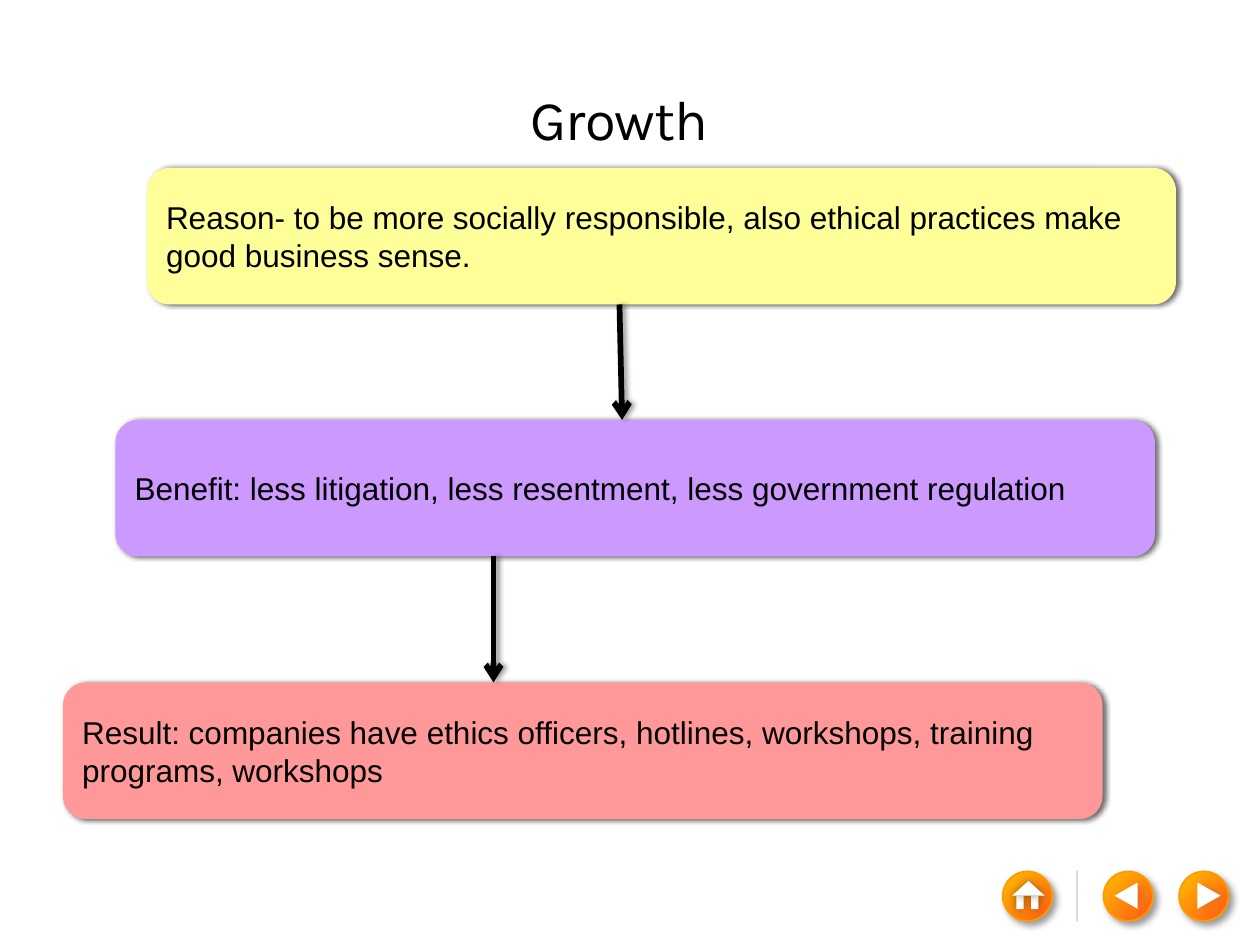
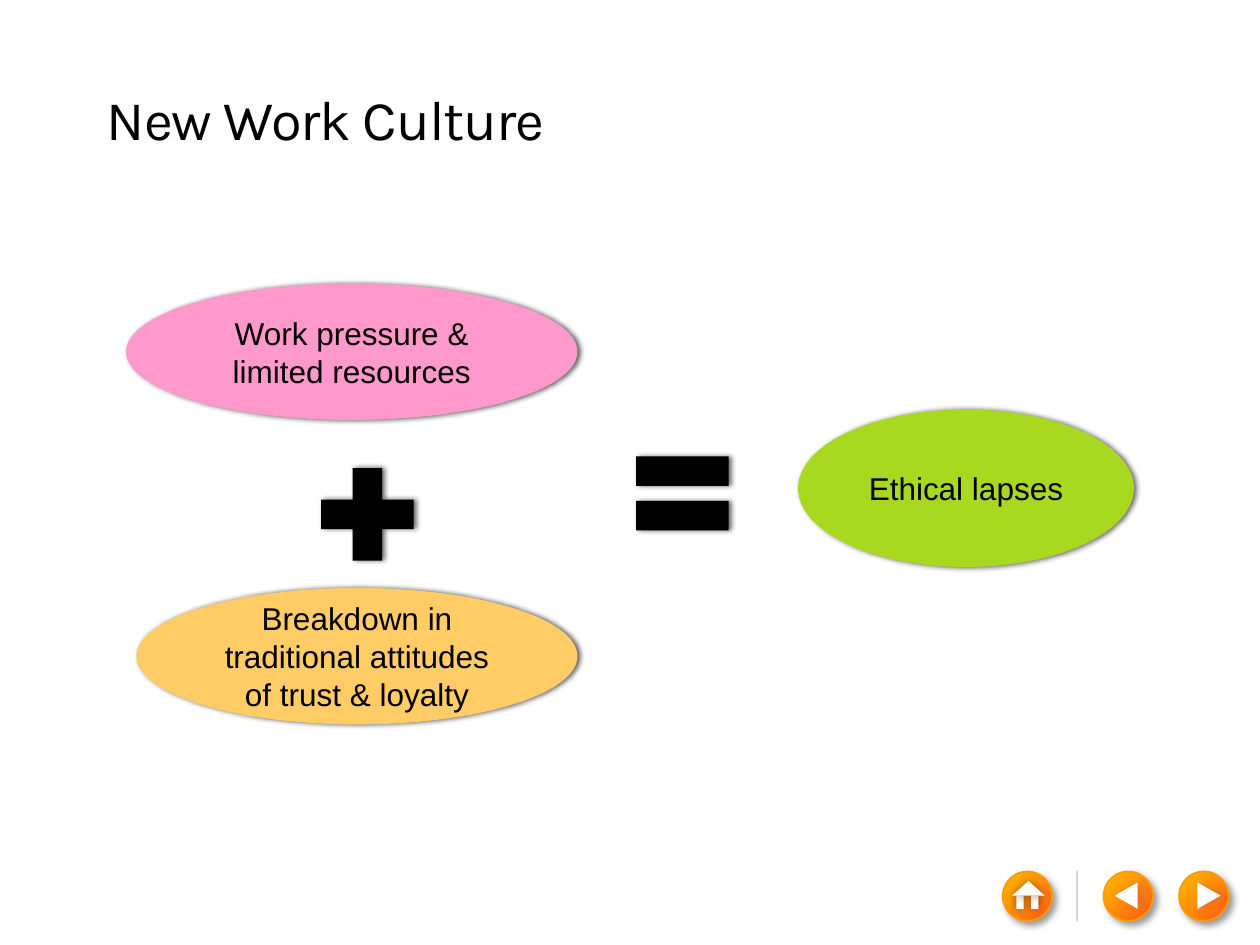
"""Build two slides on growth and the new work culture with shared navigation buttons."""
from dataclasses import dataclass

from pptx import Presentation
from pptx.dml.color import RGBColor as Color
from pptx.enum.shapes import MSO_CONNECTOR as Link, MSO_SHAPE as Form
from pptx.enum.text import MSO_ANCHOR as Anchor, PP_ALIGN as Align
from pptx.oxml.ns import qn
from pptx.util import Inches, Pt
from lxml.etree import SubElement


@dataclass(frozen=True)
class Theme:
    ink: str = "000000"
    white: str = "FFFFFF"
    divider: str = "D9D9D9"
    button_rim: str = "FF9900"
    button_glow: tuple = ("FE5815", "FFC000")
    purple: str = "CC99FF"
    yellow: str = "FFFF99"
    coral: str = "FF9999"
    pink: str = "FF99CC"
    amber: str = "FFCC66"
    green: str = "A9D820"
    title_size: int = 32
    body_size: int = 18
    title_font: str = "Karla"
    body_font: str = "Arial"
    soft_shadow: tuple = ("000000", 60, 3, 1.5, 0)
    arrow_shadow: tuple = ("000000", 40, 3.1, 1.8, 0)
    button_shadow: tuple = ("000000", 40, 4, 3, 45)
    triangle_shadow: tuple = ("D35641", 40, 4, 3, 0)
    house_shadow: tuple = ("000000", 40, 5, 0, 0)


theme = Theme()
deck = Presentation()
deck.slide_width, deck.slide_height = Inches(10), Inches(7.5)
COLUMNS = 120
CELL = deck.slide_width / COLUMNS


def cast_shadow(properties, colour, opacity, blur, distance, angle):
    effects = properties.find(qn("a:effectLst"))
    if effects is None:
        effects = SubElement(properties, qn("a:effectLst"))
    shadow = SubElement(effects, qn("a:outerShdw"), blurRad=str(Pt(blur)),
                        dist=str(Pt(distance)), dir=str(angle * 60000),
                        algn="ctr", rotWithShape="0")
    tint = SubElement(shadow, qn("a:srgbClr"), val=colour)
    SubElement(tint, qn("a:alpha"), val=str(opacity * 1000))


def add_form(page, kind, cells, colour, shadow, text="", align=Align.CENTER):
    box = page.shapes.add_shape(kind, *(round(cell * CELL) for cell in cells))
    box.fill.solid()
    box.fill.fore_color.rgb = Color.from_string(colour)
    box.line.fill.background()
    box.shadow.inherit = False
    cast_shadow(box._element.spPr, *shadow)
    if text:
        frame = box.text_frame
        for name, value in {"word_wrap": True, "vertical_anchor": Anchor.MIDDLE}.items():
            setattr(frame, name, value)
        para = frame.paragraphs[0]
        para.alignment = align
        span = para.add_run()
        span.text = text
        for name, value in {"name": theme.body_font, "size": Pt(theme.body_size)}.items():
            setattr(span.font, name, value)
        span.font.color.rgb = Color.from_string(theme.ink)
    return box


BUTTON_TOP, BUTTON_SIZE = 83, 4.7
HOUSE = [
    (Form.RECTANGLE, (98.2, 85.3, 0.7, 1.3)),
    (Form.RECTANGLE, (96.8, 85.3, 0.7, 1.3)),
    (Form.ISOSCELES_TRIANGLE, (96.4, 83.9, 3.1, 1.4)),
]
pages = []
for heading, align in [("Growth", Align.CENTER), ("New Work Culture", Align.LEFT)]:
    page = deck.slides.add_slide(deck.slide_layouts[6])
    pages.append(page)
    page.background.fill.solid()
    page.background.fill.fore_color.rgb = Color.from_string(theme.white)

    for left in (112.3, 105.1, 95.5):
        button = add_form(page, Form.OVAL, (left, BUTTON_TOP, BUTTON_SIZE, BUTTON_SIZE),
                          theme.button_rim, theme.button_shadow)
        button.line.color.rgb = Color.from_string(theme.button_rim)
        button.line.width = Pt(1)
        button.fill.gradient()
        for stop, colour in zip(button.fill.gradient_stops, theme.button_glow):
            stop.color.rgb = Color.from_string(colour)
        gradient = button._element.spPr.find(qn("a:gradFill"))
        gradient.remove(gradient.find(qn("a:lin")))
        glow = SubElement(gradient, qn("a:path"), path="circle")
        SubElement(glow, qn("a:fillToRect"), l="100000", t="100000")

    for left, turn in [(113.9, 90), (106, 270)]:
        triangle = add_form(page, Form.ISOSCELES_TRIANGLE, (left, 84.2, 2.5, 2.2),
                            theme.white, theme.triangle_shadow)
        triangle.rotation = turn
    for kind, cells in HOUSE:
        add_form(page, kind, cells, theme.white, theme.house_shadow)

    ends = (102.6, BUTTON_TOP, 102.6, BUTTON_TOP + BUTTON_SIZE)
    divider = page.shapes.add_connector(Link.STRAIGHT, *(round(end * CELL) for end in ends))
    divider.line.color.rgb = Color.from_string(theme.divider)
    divider.line.width = Pt(1)
    SubElement(divider._element.spPr, qn("a:effectLst"))

    title = page.shapes.add_textbox(*(round(cell * CELL) for cell in (9, 4, 100, 11)))
    for name, value in {"word_wrap": True, "vertical_anchor": Anchor.BOTTOM}.items():
        setattr(title.text_frame, name, value)
    para = title.text_frame.paragraphs[0]
    para.alignment = align
    span = para.add_run()
    span.text = heading
    for name, value in {"name": theme.title_font, "size": Pt(theme.title_size)}.items():
        setattr(span.font, name, value)
    span.font.color.rgb = Color.from_string(theme.ink)
    span._r.get_or_add_rPr().set("spc", "-60")

growth, culture = pages

STEP_HEIGHT = 13
STEPS = [
    ((11, 40, 99), theme.purple,
     "Benefit: less litigation, less resentment, less government regulation"),
    ((14, 16, 98), theme.yellow,
     "Reason- to be more socially responsible, also ethical practices make good business sense."),
    ((6, 65, 99), theme.coral,
     "Result: companies have ethics officers, hotlines, workshops, training programs, workshops"),
]
for cells, colour, text in STEPS:
    add_form(growth, Form.ROUNDED_RECTANGLE, (*cells, STEP_HEIGHT), colour,
             theme.soft_shadow, text, Align.LEFT)

for ends in [(59, 29, 59.25, 40), (47, 53, 47, 65)]:
    arrow = growth.shapes.add_connector(Link.STRAIGHT, *(round(end * CELL) for end in ends))
    arrow.line.color.rgb = Color.from_string(theme.ink)
    arrow.line.width = Pt(3.25)
    SubElement(arrow.line._get_or_add_ln(), qn("a:tailEnd"), type="arrow")
    cast_shadow(arrow._element.spPr, *theme.arrow_shadow)

EQUATION = [
    (Form.OVAL, (12, 27, 43, 13), theme.pink, "Work pressure & limited resources"),
    (Form.OVAL, (13, 56, 42, 13), theme.amber,
     "Breakdown in traditional attitudes of trust & loyalty"),
    (Form.MATH_EQUAL, (59, 41, 12, 12), theme.ink, ""),
    (Form.MATH_PLUS, (29, 43, 12, 12), theme.ink, ""),
    (Form.OVAL, (76, 39, 32, 15), theme.green, "Ethical lapses"),
]
for kind, cells, colour, text in EQUATION:
    add_form(culture, kind, cells, colour, theme.soft_shadow, text)

deck.save("out.pptx")
